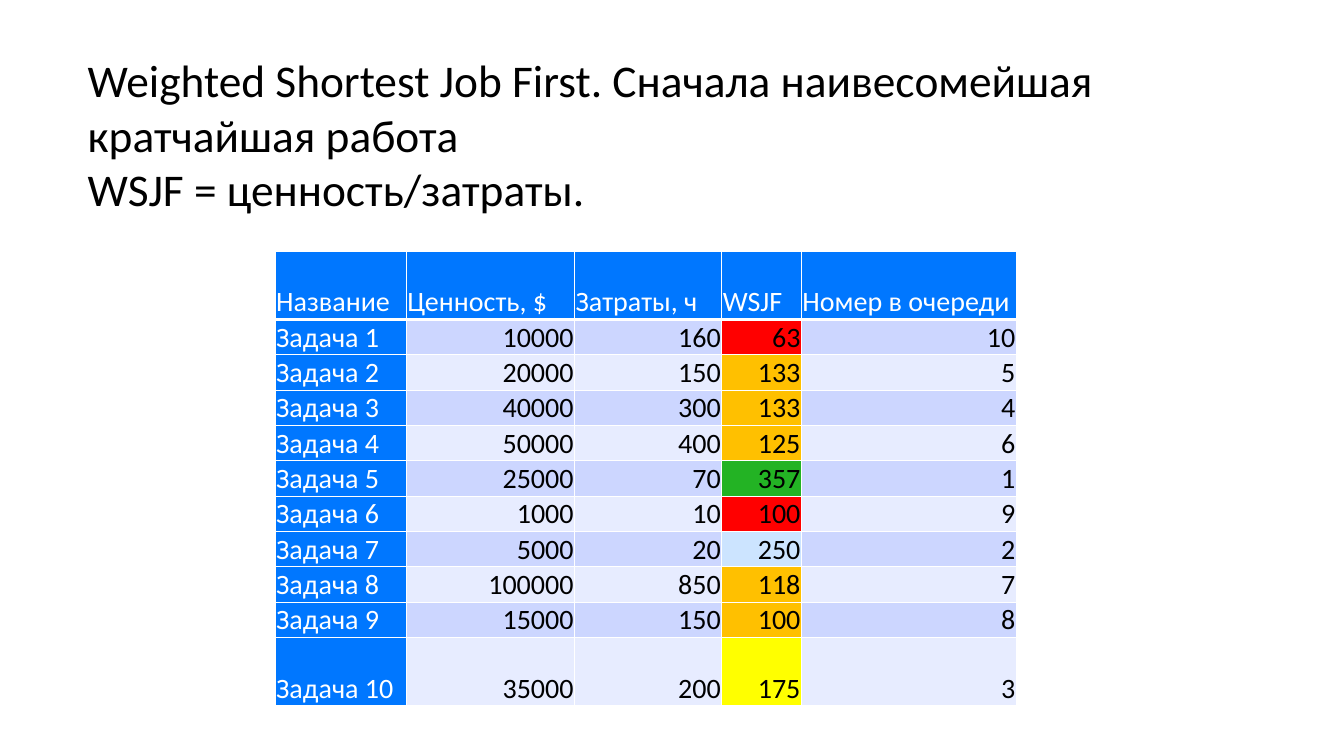
from dataclasses import dataclass

from lxml.etree import SubElement
from pptx import Presentation
from pptx.dml.color import RGBColor
from pptx.enum.text import MSO_ANCHOR, MSO_AUTO_SIZE, PP_ALIGN
from pptx.oxml.ns import qn
from pptx.slide import Slide
from pptx.table import _Cell as Cell
from pptx.text.text import TextFrame
from pptx.util import Inches, Pt

WHITE = RGBColor(0xFF, 0xFF, 0xFF)
BLACK = RGBColor(0x00, 0x00, 0x00)
BLUE = RGBColor(0x00, 0x77, 0xFF)
BAND_DARK = RGBColor(0xCC, 0xD6, 0xFF)
BAND_LIGHT = RGBColor(0xE7, 0xEC, 0xFF)
RED = RGBColor(0xFF, 0x00, 0x00)
ORANGE = RGBColor(0xFF, 0xC0, 0x00)
YELLOW = RGBColor(0xFF, 0xFF, 0x00)
GREEN = RGBColor(0x23, 0xB3, 0x24)
PALE_BLUE = RGBColor(0xCC, 0xE4, 0xFF)

FONT = "Calibri"
TITLE_LINES = [
    "Weighted Shortest Job First. Сначала наивесомейшая кратчайшая работа",
    "WSJF = ценность/затраты.",
]
HEADERS = ["Название", "Ценность, $", "Затраты, ч", "WSJF", "Номер в очереди"]
COLUMN_WIDTHS = [1.3, 1.67, 1.46, 0.79, 2.13]
ROW_HEIGHT = 0.34
THIN, THICK = 1, 3


@dataclass(frozen=True)
class Task:
    value: int
    cost: int
    queue_number: int
    color: RGBColor

    @property
    def wsjf(self) -> int:
        """Value per hour, with halves rounded up."""
        return int(self.value / self.cost + 0.5)


TASKS = [
    Task(10000, 160, 10, RED),
    Task(20000, 150, 5, ORANGE),
    Task(40000, 300, 4, ORANGE),
    Task(50000, 400, 6, ORANGE),
    Task(25000, 70, 1, GREEN),
    Task(1000, 10, 9, RED),
    Task(5000, 20, 2, PALE_BLUE),
    Task(100000, 850, 7, ORANGE),
    Task(15000, 150, 8, ORANGE),
    Task(35000, 200, 3, YELLOW),
]


def write_text(frame: TextFrame, lines: list[str], *, size: float,
               color: RGBColor, align: PP_ALIGN = PP_ALIGN.LEFT) -> None:
    paragraph = frame.paragraphs[0]
    paragraph.alignment = align
    for index, line in enumerate(lines):
        if index:
            paragraph.add_line_break()
        run = paragraph.add_run()
        run.text = line
        run.font.name = FONT
        run.font.size = Pt(size)
        run.font.color.rgb = color


def set_borders(cell: Cell, top: float, bottom: float) -> None:
    """Give the cell white borders; call before setting its fill."""
    properties = cell._tc.get_or_add_tcPr()
    widths = {"a:lnL": THIN, "a:lnR": THIN, "a:lnT": top, "a:lnB": bottom}
    for tag, width in widths.items():
        line = SubElement(properties, qn(tag), w=str(Pt(width)))
        fill = SubElement(line, qn("a:solidFill"))
        SubElement(fill, qn("a:srgbClr"), val=str(WHITE))


def format_cell(cell: Cell, text: str, *, fill: RGBColor, color: RGBColor,
                align: PP_ALIGN, top: float, bottom: float) -> None:
    cell.margin_left = cell.margin_right = cell.margin_top = Inches(0.01)
    cell.margin_bottom = 0
    cell.vertical_anchor = MSO_ANCHOR.BOTTOM
    set_borders(cell, top, bottom)
    cell.fill.solid()
    cell.fill.fore_color.rgb = fill
    write_text(cell.text_frame, [text], size=20, color=color, align=align)


def add_title(slide: Slide) -> None:
    title = slide.shapes.title
    title.left, title.top = Inches(0.87), Inches(0.3)
    title.width, title.height = Inches(11.61), Inches(1.4)
    frame = title.text_frame
    frame.margin_left = frame.margin_right = frame.margin_bottom = 0
    frame.margin_top = Inches(0.22)
    frame.vertical_anchor = MSO_ANCHOR.TOP
    frame.auto_size = MSO_AUTO_SIZE.NONE
    frame.word_wrap = True
    write_text(frame, TITLE_LINES, size=32.4, color=BLACK)


def add_task_table(slide: Slide) -> None:
    rows = [HEADERS] + [
        [f"Задача {number}", str(task.value), str(task.cost),
         str(task.wsjf), str(task.queue_number)]
        for number, task in enumerate(TASKS, 1)
    ]
    table = slide.shapes.add_table(
        len(rows), len(HEADERS), Inches(2.73), Inches(2.49),
        Inches(sum(COLUMN_WIDTHS)), Inches(ROW_HEIGHT * (len(rows) + 2)),
    ).table
    for column, width in zip(table.columns, COLUMN_WIDTHS):
        column.width = Inches(width)

    wsjf_column = HEADERS.index("WSJF")
    last_row = len(rows) - 1
    for row_index, texts in enumerate(rows):
        is_tall = row_index in (0, last_row)
        table.rows[row_index].height = Inches(ROW_HEIGHT * (2 if is_tall else 1))
        band = BAND_DARK if row_index % 2 else BAND_LIGHT
        for column_index, text in enumerate(texts):
            is_heading = row_index == 0 or column_index == 0
            if is_heading:
                fill = BLUE
            elif column_index == wsjf_column:
                fill = TASKS[row_index - 1].color
            else:
                fill = band
            format_cell(
                table.cell(row_index, column_index), text, fill=fill,
                color=WHITE if is_heading else BLACK,
                align=PP_ALIGN.LEFT if is_heading else PP_ALIGN.RIGHT,
                top=THICK if row_index == 1 else THIN,
                bottom=THICK if row_index == 0 else THIN,
            )


def main() -> None:
    presentation = Presentation()
    presentation.slide_width = Inches(13.33)
    presentation.slide_height = Inches(7.5)
    title_only = presentation.slide_layouts[5]
    slide = presentation.slides.add_slide(title_only)
    add_title(slide)
    add_task_table(slide)
    presentation.save("out.pptx")


if __name__ == "__main__":
    main()
